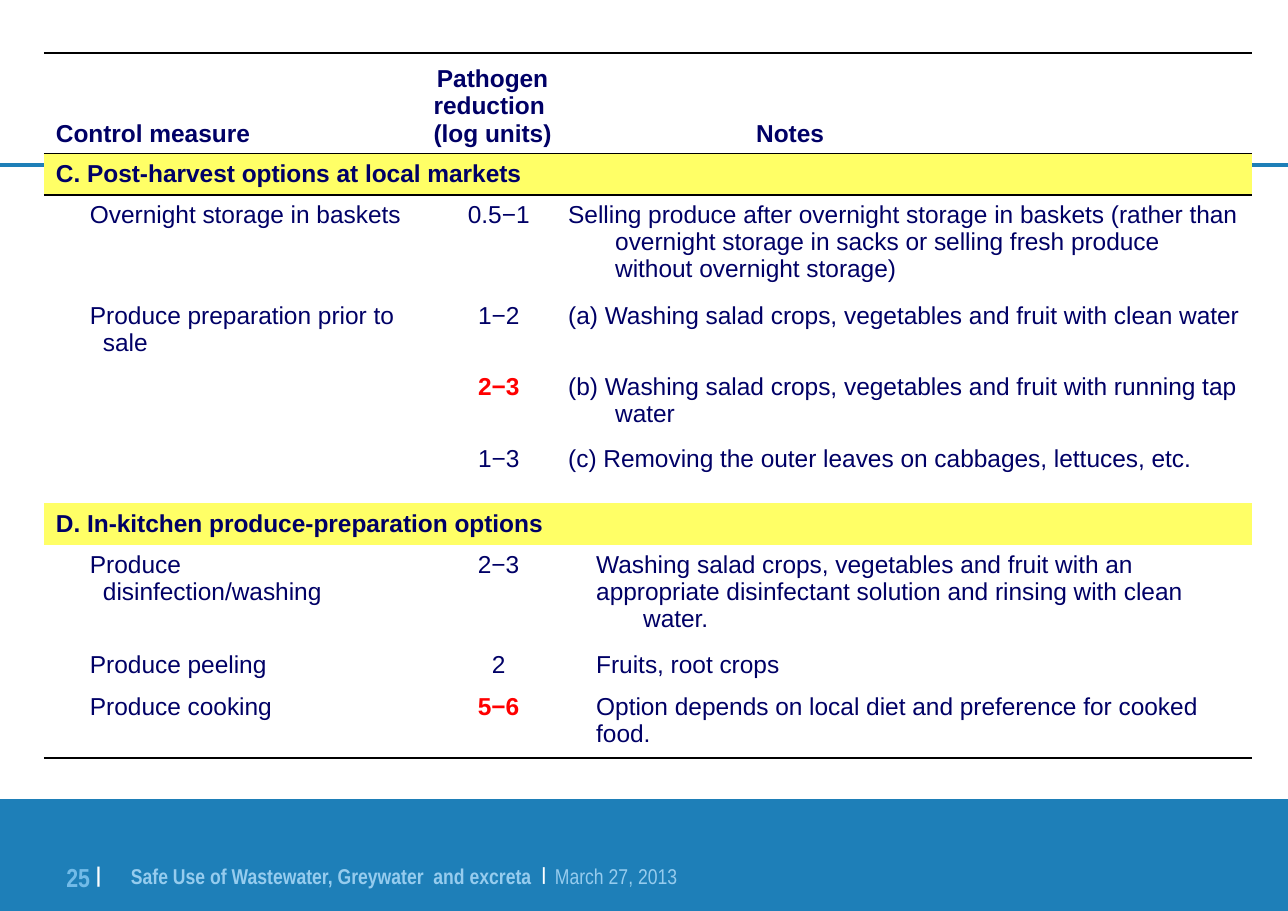
from lxml import etree
from pptx import Presentation
from pptx import util as u
from pptx.dml.color import RGBColor
from pptx.enum import shapes, text
from pptx.oxml.ns import qn

SCALE = 8297
SLIDE_WIDTH, SLIDE_HEIGHT = 1288, 911
NAVY, RED, BLACK, WHITE = "000066", "FF0000", "000000", "FFFFFF"
BLUE, YELLOW, PALE_BLUE, NUMBER_BLUE = "1E7FB8", "FFFF66", "96CCEE", "72BBE8"
NO_STYLE = "{2D5ABB26-0587-4C30-8999-92F81FD0307C}"

COLUMNS = [325, 44, 27, 115, 28, 32, 636]
ROWS = [
    ("header", 100, ["Control measure", "Pathogen\nreduction \n(log units)", "Notes"]),
    ("section", 42, ["C. Post-harvest options at local markets"]),
    ("market", 101, ["Overnight storage in baskets", "0.5−1",
                     "Selling produce after overnight storage in baskets (rather than overnight "
                     "storage in sacks or selling fresh produce without overnight storage)"]),
    ("market", 71, ["Produce preparation prior to sale", "1−2",
                    "(a) Washing salad crops, vegetables and fruit with clean water"]),
    ("market", 72, ["", "2−3",
                    "(b) Washing salad crops, vegetables and fruit with running tap water"]),
    ("market", 64, ["", "1−3", "(c) Removing the outer leaves on cabbages, lettuces, etc."]),
    ("section", 42, ["D. In-kitchen produce-preparation options"]),
    ("kitchen", 100, ["Produce disinfection/washing", "2−3",
                      "Washing salad crops, vegetables and fruit with an\n"
                      "appropriate disinfectant solution and rinsing with clean water."]),
    ("kitchen", 42, ["Produce peeling", "2", "Fruits, root crops"]),
    ("kitchen", 71, ["Produce cooking", "5−6",
                     "Option depends on local diet and preference for cooked\nfood."]),
]
SPANS = {"header": [1, 5, 1], "section": [7], "market": [3, 1, 3], "kitchen": [2, 3, 2]}
ANCHORS = {"header": text.MSO_ANCHOR.BOTTOM, "section": text.MSO_ANCHOR.MIDDLE}
HANGING, MEASURE, NOTES_HEADING = (47, -47), (47, -13), (128, 0)
HIGHLIGHTED_ROWS = {4, 9}
RULES = {0: ["lnT", "lnB"], 1: ["lnT"], 9: ["lnB"]}

FOOTER = [("Safe Use of Wastewater, Greywater  and excreta", 14, PALE_BLUE, True, 0),
          ("\t|", 20, WHITE, True, 12), ("\tMarch 27, 2013", 14, PALE_BLUE, False, 0)]
FOOTER_TABS = [411, 424]
PAGE_NUMBER = [("25 ", 17, NUMBER_BLUE, True, 0), ("|", 24, WHITE, True, 14)]


def px(length):
    return u.Emu(length * SCALE)


def color(value):
    return RGBColor.from_string(value)


def add_run(paragraph, words, size, value, bold, font="Arial", baseline=0):
    run = paragraph.add_run()
    run.text = words
    run.font.name, run.font.size, run.font.bold = font, u.Pt(size), bold
    run.font.color.rgb = color(value)
    if baseline:
        run._r.get_or_add_rPr().set("baseline", str(baseline * 1000))


def add_footer_box(slide, box, runs, alignment, tabs=()):
    frame = slide.shapes.add_textbox(*map(px, box)).text_frame
    frame.word_wrap = True
    frame.margin_left = frame.margin_right = frame.margin_top = frame.margin_bottom = 0
    paragraph = frame.paragraphs[0]
    paragraph.alignment = alignment
    if tabs:
        tab_list = etree.SubElement(paragraph._p.get_or_add_pPr(), qn("a:tabLst"))
        for position in tabs:
            etree.SubElement(tab_list, qn("a:tab"), pos=str(px(position)), algn="l")
    for words, size, value, bold, baseline in runs:
        add_run(paragraph, words, size, value, bold, "Arial Narrow", baseline)


def add_rules(cell, sides):
    properties = cell._tc.get_or_add_tcPr()
    for position, side in enumerate(sides):
        line = etree.Element(qn(f"a:{side}"), w=str(u.Pt(1)))
        fill = etree.SubElement(line, qn("a:solidFill"))
        etree.SubElement(fill, qn("a:srgbClr"), val=BLACK)
        properties.insert(position, line)


def write_cell(cell, words, kind, place, highlighted):
    indent = HANGING
    if kind == "header" and place == 2:
        indent = NOTES_HEADING
    elif kind in ("market", "kitchen") and place == 0:
        indent = MEASURE
    bold = kind in ("header", "section") or highlighted
    for number, line in enumerate(words.split("\n")):
        frame = cell.text_frame
        paragraph = frame.add_paragraph() if number else frame.paragraphs[0]
        if place == 1:
            paragraph.alignment = text.PP_ALIGN.CENTER
        else:
            properties = paragraph._p.get_or_add_pPr()
            properties.set("marL", str(px(indent[0])))
            properties.set("indent", str(px(indent[1])))
        add_run(paragraph, line, 16, RED if highlighted else NAVY, bold)


def add_measures_table(slide):
    heights = [height for _, height, _ in ROWS]
    frame = slide.shapes.add_table(len(ROWS), len(COLUMNS), px(44), px(53),
                                   px(sum(COLUMNS)), px(sum(heights)))
    table = frame.table
    table.first_row = table.horz_banding = False
    table._tbl.tblPr.find(qn("a:tableStyleId")).text = NO_STYLE
    for column, width in zip(table.columns, COLUMNS):
        column.width = px(width)
    for index, (kind, height, contents) in enumerate(ROWS):
        table.rows[index].height = px(height)
        for cell in table.rows[index].cells:
            cell.margin_left = cell.margin_right = px(12)
            cell.margin_top = cell.margin_bottom = px(6)
            cell.vertical_anchor = ANCHORS.get(kind, text.MSO_ANCHOR.TOP)
            cell.fill.solid()
            cell.fill.fore_color.rgb = color(YELLOW if kind == "section" else WHITE)
            add_rules(cell, RULES.get(index, []))
        start = 0
        for place, (words, span) in enumerate(zip(contents, SPANS[kind])):
            cell = table.cell(index, start)
            if span > 1:
                cell.merge(table.cell(index, start + span - 1))
            if words:
                write_cell(cell, words, kind, place, place == 1 and index in HIGHLIGHTED_ROWS)
            start += span


def main():
    presentation = Presentation()
    presentation.slide_width, presentation.slide_height = px(SLIDE_WIDTH), px(SLIDE_HEIGHT)
    slide = presentation.slides.add_slide(presentation.slide_layouts[6])

    title_line = slide.shapes.add_connector(shapes.MSO_CONNECTOR.STRAIGHT,
                                            0, px(165), px(SLIDE_WIDTH), px(165))
    title_line.line.color.rgb = color(BLUE)
    title_line.line.width = u.Pt(3)
    etree.SubElement(title_line._element.spPr, qn("a:effectLst"))

    band = slide.shapes.add_shape(shapes.MSO_SHAPE.RECTANGLE,
                                  0, px(799), px(SLIDE_WIDTH), px(SLIDE_HEIGHT - 799))
    band.shadow.inherit = False
    band.fill.solid()
    band.fill.fore_color.rgb = color(BLUE)
    band.line.fill.background()

    add_footer_box(slide, (131, 854, 598, 57), FOOTER, text.PP_ALIGN.LEFT, FOOTER_TABS)
    add_footer_box(slide, (51, 851, 50, 44), PAGE_NUMBER, text.PP_ALIGN.RIGHT)
    add_measures_table(slide)
    presentation.save("out.pptx")


if __name__ == "__main__":
    main()
